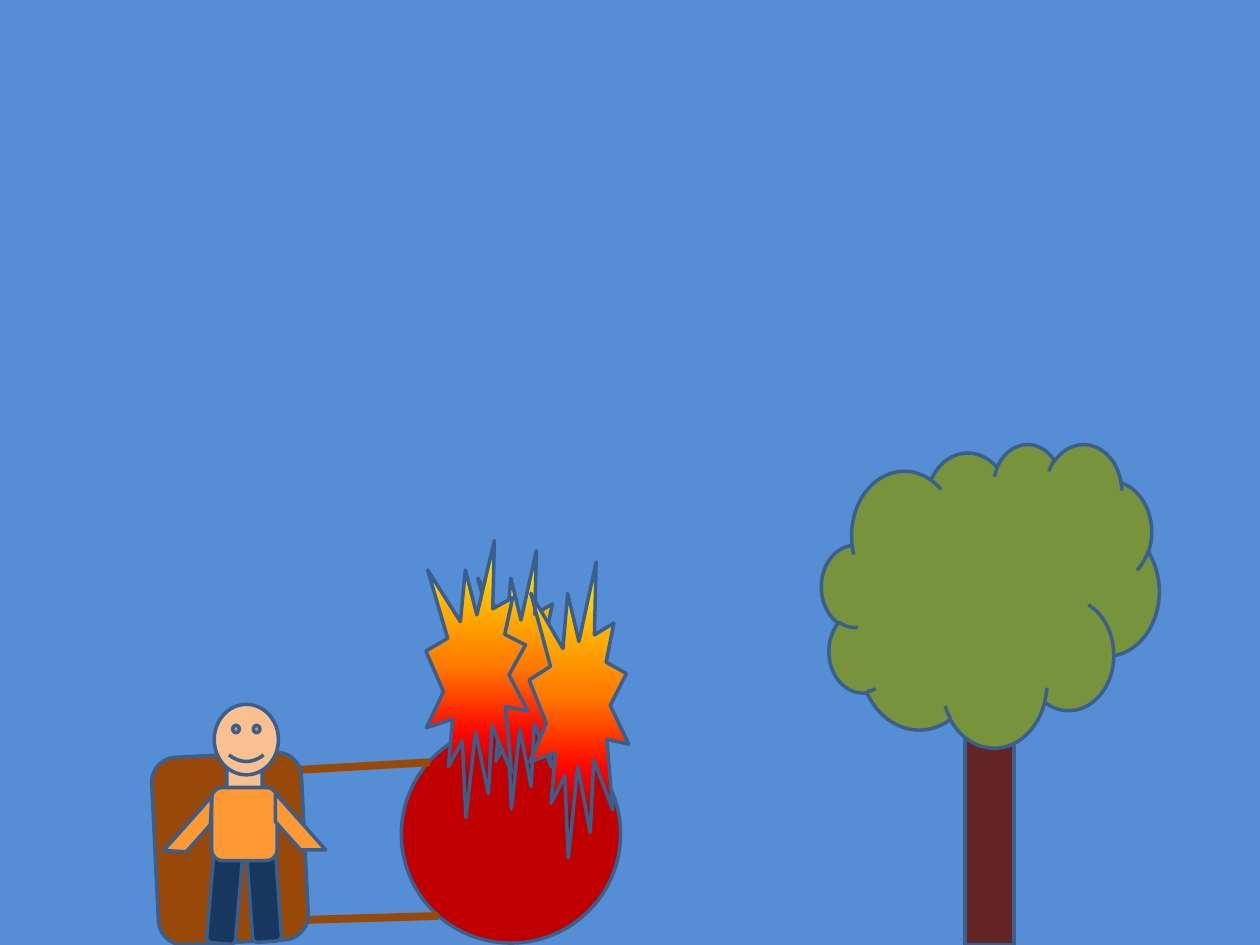
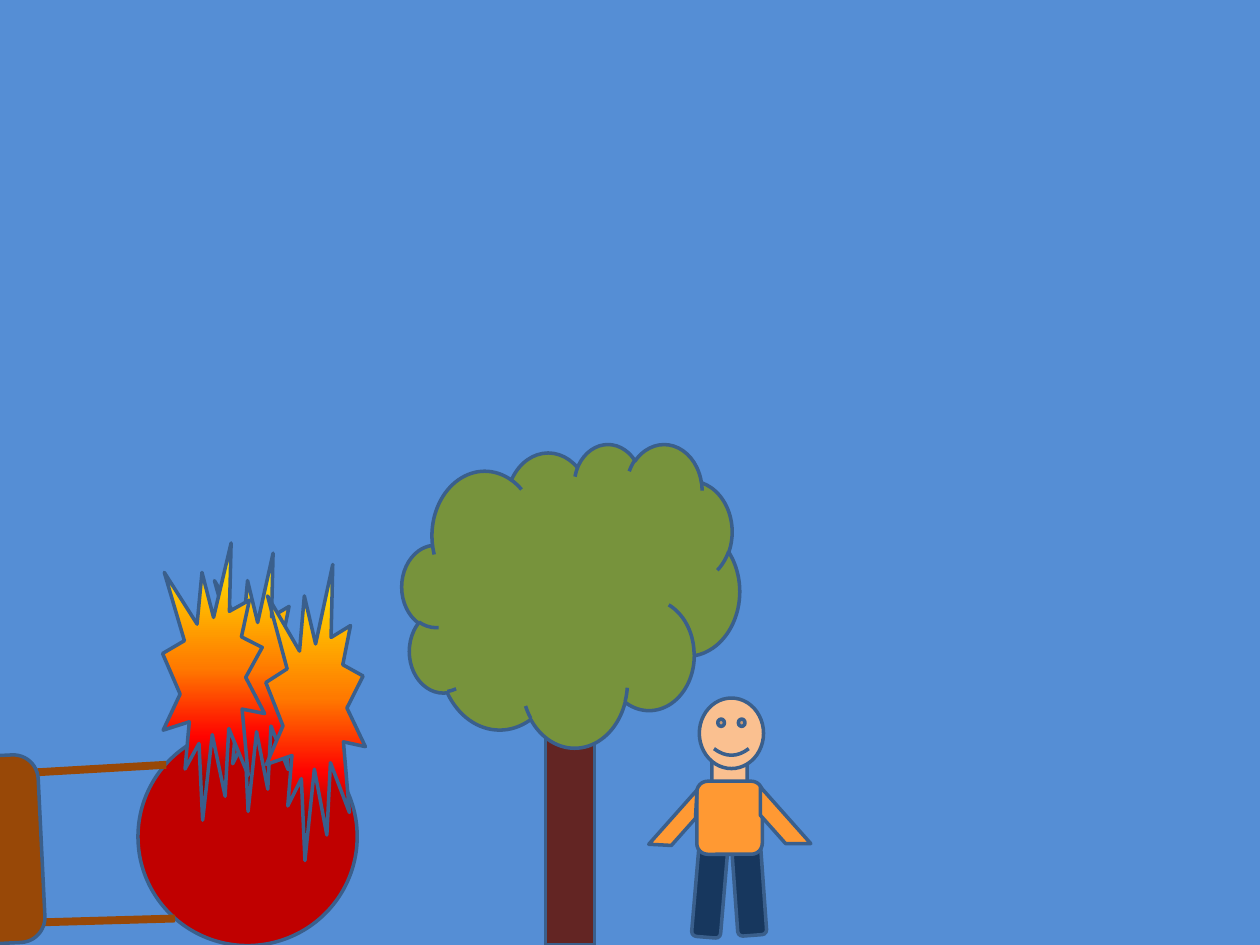
from dataclasses import dataclass
from typing import Union

from lxml.etree import SubElement
from pptx import Presentation
from pptx.dml.color import RGBColor
from pptx.enum.shapes import MSO_CONNECTOR, MSO_SHAPE
from pptx.oxml.ns import qn
from pptx.shapes.group import GroupShape
from pptx.slide import Slide
from pptx.util import Inches, Pt

SLIDE_WIDTH, SLIDE_HEIGHT = Inches(10), Inches(7.5)
COLUMNS, ROWS = 100, 75
COLUMN, ROW = SLIDE_WIDTH / COLUMNS, SLIDE_HEIGHT / ROWS

SKY = "558ED5"
OUTLINE = "3A5F8C"
BARK = "632523"
LEAVES = "77933C"
BALL = "C00000"
WOOD = "984807"
TROUSERS = "17375E"
SKIN = "FAC090"
SHIRT = "FF9933"
FIRE = ((0, "FFF200"), (45, "FF7A00"), (70, "FF0300"), (100, "4D0808"))
FIRE_ANGLE = 270

OUTLINE_FORMAT = {"width": Pt(2)}
ROPE_FORMAT = {"width": Pt(4.5)}


@dataclass(frozen=True)
class Part:
    """A filled shape, placed in columns and rows from its figure's corner."""
    preset: MSO_SHAPE
    fill: Union[str, tuple]
    column: float
    row: float
    columns: float
    rows: float
    rotation: float = 0


@dataclass(frozen=True)
class Rope:
    start: tuple[float, float]
    end: tuple[float, float]


@dataclass(frozen=True)
class Placement:
    figure: tuple
    column: float
    row: float


def flame(column: float, row: float, columns: float, rows: float) -> Part:
    return Part(MSO_SHAPE.EXPLOSION1, FIRE, column, row, columns, rows)


TREE = (
    Part(MSO_SHAPE.RECTANGLE, BARK, 11.4, 21.2, 3.9, 18.6),
    Part(MSO_SHAPE.CLOUD, LEAVES, 0, 0, 26.8, 24.1),
)
FIRE_CART = (
    Part(MSO_SHAPE.OVAL, BALL, 21.1, 14.6, 17.3, 17.4, 87.2),
    Rope((23.3, 17.6), (12.9, 18.2)),
    Rope((24, 29.8), (13.5, 30.1)),
    Part(MSO_SHAPE.ROUNDED_RECTANGLE, WOOD, 0, 18.5, 14.9, 11.9, 87.2),
    flame(27, 0.8, 7.1, 20.5),
    flame(31.2, 1.7, 7.9, 23.5),
    flame(23, 0, 8.1, 22),
)
PERSON = (
    Part(MSO_SHAPE.ROUNDED_RECTANGLE, TROUSERS, 3.7, 8.8, 2.3, 10.2, 4.9),
    Part(MSO_SHAPE.ROUNDED_RECTANGLE, TROUSERS, 3.3, 13.2, 9, 2.3, 85.9),
    Part(MSO_SHAPE.ROUNDED_RECTANGLE, SKIN, 4.9, 3.8, 2.8, 4.2),
    Part(MSO_SHAPE.SMILEY_FACE, SKIN, 3.9, 0, 5.1, 5.6),
    Part(MSO_SHAPE.ROUNDED_RECTANGLE, SHIRT, 3.7, 6.6, 5.2, 5.8),
    Part(MSO_SHAPE.DIAGONAL_STRIPE, SHIRT, 0, 7.2, 3.6, 4.5, 183),
    Part(MSO_SHAPE.DIAGONAL_STRIPE, SHIRT, 8.5, 7.3, 4.5, 4, 270),
)

SCENES = (
    (
        Placement(TREE, 65.2, 35.2),
        Placement(FIRE_CART, 10.8, 42.9),
        Placement(PERSON, 13.1, 55.9),
    ),
    (
        Placement(PERSON, 51.6, 55.4),
        Placement(FIRE_CART, -10.1, 43.1),
        Placement(TREE, 31.9, 35.2),
    ),
)


def color(value: str) -> RGBColor:
    return RGBColor.from_string(value)


def set_format(target, values: dict) -> None:
    for attribute, value in values.items():
        setattr(target, attribute, value)


def grid_point(place: Placement, column: float, row: float) -> tuple[int, int]:
    return round((place.column + column) * COLUMN), round((place.row + row) * ROW)


def fill_gradient(shape, stops: tuple) -> None:
    shape.fill.gradient()
    shape.fill.gradient_angle = FIRE_ANGLE
    stop_list = next(shape._element.spPr.iter(qn("a:gsLst")))
    for default_stop in list(stop_list):
        stop_list.remove(default_stop)
    for percent, value in stops:
        stop = SubElement(stop_list, qn("a:gs"), pos=str(percent * 1000))
        SubElement(stop, qn("a:srgbClr"), val=value)


def draw_part(group: GroupShape, place: Placement, part: Part) -> None:
    left, top = grid_point(place, part.column, part.row)
    shape = group.shapes.add_shape(
        part.preset, left, top, round(part.columns * COLUMN), round(part.rows * ROW)
    )
    shape.rotation = part.rotation
    shape.shadow.inherit = False
    if isinstance(part.fill, str):
        shape.fill.solid()
        shape.fill.fore_color.rgb = color(part.fill)
    else:
        fill_gradient(shape, part.fill)
    shape.line.color.rgb = color(OUTLINE)
    set_format(shape.line, OUTLINE_FORMAT)


def draw_rope(group: GroupShape, place: Placement, rope: Rope) -> None:
    start, end = grid_point(place, *rope.start), grid_point(place, *rope.end)
    connector = group.shapes.add_connector(MSO_CONNECTOR.STRAIGHT, *start, *end)
    connector.line.color.rgb = color(WOOD)
    set_format(connector.line, ROPE_FORMAT)
    SubElement(connector._element.spPr, qn("a:effectLst"))


def draw_figure(slide: Slide, place: Placement) -> None:
    group = slide.shapes.add_group_shape()
    for piece in place.figure:
        draw = draw_rope if isinstance(piece, Rope) else draw_part
        draw(group, place, piece)


def main() -> None:
    deck = Presentation()
    set_format(deck, {"slide_width": SLIDE_WIDTH, "slide_height": SLIDE_HEIGHT})
    for scene in SCENES:
        slide = deck.slides.add_slide(deck.slide_layouts[6])
        slide.background.fill.solid()
        slide.background.fill.fore_color.rgb = color(SKY)
        for place in scene:
            draw_figure(slide, place)
    deck.save("out.pptx")


if __name__ == "__main__":
    main()
